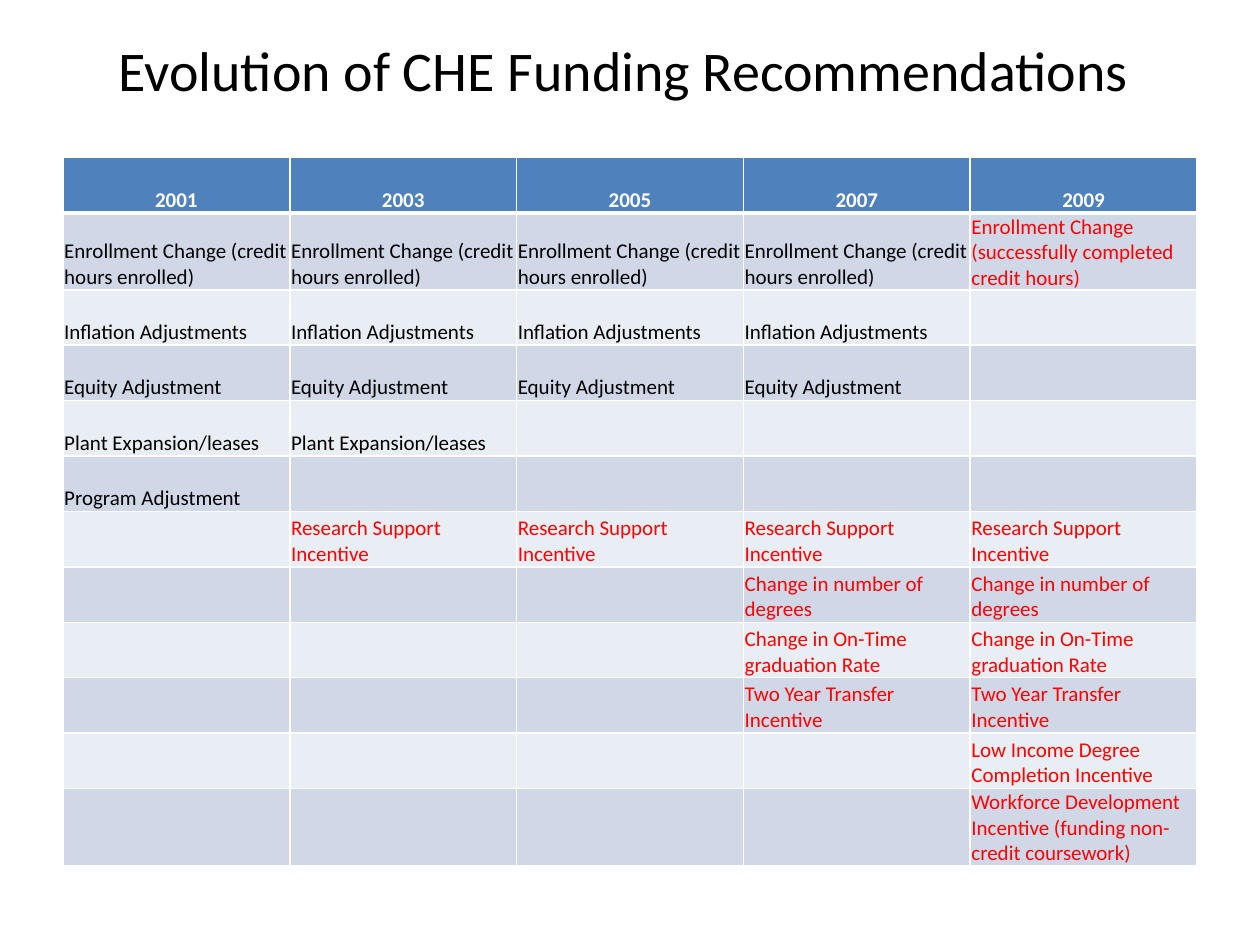
from lxml.etree import SubElement
from pptx import Presentation
from pptx.dml.color import RGBColor
from pptx.enum.text import MSO_ANCHOR, PP_ALIGN
from pptx.oxml.ns import qn
from pptx.util import Inches, Pt

BLACK = RGBColor(0x00, 0x00, 0x00)
WHITE = RGBColor(0xFF, 0xFF, 0xFF)
RED = RGBColor(0xFF, 0x00, 0x00)
HEADER_BLUE = RGBColor(0x4F, 0x81, 0xBD)
BAND_DARK = RGBColor(0xD0, 0xD8, 0xE8)
BAND_LIGHT = RGBColor(0xE9, 0xED, 0xF4)

SLIDE_WIDTH = Inches(10)
SLIDE_HEIGHT = Inches(7.5)
MARGIN = int(SLIDE_WIDTH * 0.05)
CONTENT_WIDTH = SLIDE_WIDTH - 2 * MARGIN
ROW_HEIGHT = Inches(0.44)
TALL_ROW_HEIGHT = Inches(0.61)

YEARS = ["2001", "2003", "2005", "2007", "2009"]
RECOMMENDATIONS = [
    [("Enrollment Change (credit hours enrolled)", "2001", "2007", BLACK),
     ("Enrollment Change (successfully completed credit hours)", "2009", "2009", RED)],
    [("Inflation Adjustments", "2001", "2007", BLACK)],
    [("Equity Adjustment", "2001", "2007", BLACK)],
    [("Plant Expansion/leases", "2001", "2003", BLACK)],
    [("Program Adjustment", "2001", "2001", BLACK)],
    [("Research Support Incentive", "2003", "2009", RED)],
    [("Change in number of degrees", "2007", "2009", RED)],
    [("Change in On-Time graduation Rate", "2007", "2009", RED)],
    [("Two Year Transfer Incentive", "2007", "2009", RED)],
    [("Low Income Degree Completion Incentive", "2009", "2009", RED)],
    [("Workforce Development Incentive (funding non-credit coursework)",
      "2009", "2009", RED)],
]
TALL_ROWS = {1, len(RECOMMENDATIONS)}


def write_text(frame, text, size=12, color=BLACK, bold=False, align=PP_ALIGN.LEFT):
    paragraph = frame.paragraphs[0]
    paragraph.alignment = align
    paragraph.font.size = Pt(size)
    if text:
        run = paragraph.add_run()
        run.text = text
        run.font.name = "Calibri"
        run.font.size = Pt(size)
        run.font.bold = bold
        run.font.color.rgb = color


def add_borders(cell, bottom_width):
    properties = cell._tc.get_or_add_tcPr()
    for side, width in (("L", 1), ("R", 1), ("T", 1), ("B", bottom_width)):
        border = SubElement(properties, qn(f"a:ln{side}"), w=str(Pt(width)))
        fill = SubElement(border, qn("a:solidFill"))
        SubElement(fill, qn("a:srgbClr"), val=str(WHITE))


def format_cell(cell, text, fill, bottom_width=1, **text_format):
    cell.margin_left = cell.margin_right = cell.margin_top = Inches(0.01)
    cell.margin_bottom = 0
    cell.vertical_anchor = MSO_ANCHOR.BOTTOM
    add_borders(cell, bottom_width)
    cell.fill.solid()
    cell.fill.fore_color.rgb = fill
    write_text(cell.text_frame, text, **text_format)


def add_title(slide, text):
    title = slide.shapes.add_textbox(MARGIN, Inches(0.17), CONTENT_WIDTH,
                                     int(SLIDE_HEIGHT * 0.1))
    frame = title.text_frame
    frame.word_wrap = True
    frame.vertical_anchor = MSO_ANCHOR.MIDDLE
    write_text(frame, text, size=32, align=PP_ALIGN.CENTER)


def spread_over_years(spans):
    entries = [("", BLACK)] * len(YEARS)
    for text, first, last, color in spans:
        for column in range(YEARS.index(first), YEARS.index(last) + 1):
            entries[column] = (text, color)
    return entries


def add_funding_table(slide):
    heights = [TALL_ROW_HEIGHT if row in TALL_ROWS else ROW_HEIGHT
               for row in range(len(RECOMMENDATIONS) + 1)]
    table = slide.shapes.add_table(len(heights), len(YEARS), MARGIN, Inches(1.25),
                                   CONTENT_WIDTH, sum(heights)).table
    for row, height in zip(table.rows, heights):
        row.height = height
    for column, year in enumerate(YEARS):
        format_cell(table.cell(0, column), year, HEADER_BLUE, bottom_width=3,
                    color=WHITE, bold=True, align=PP_ALIGN.CENTER)
    for row, spans in enumerate(RECOMMENDATIONS, start=1):
        band = BAND_DARK if row % 2 else BAND_LIGHT
        for column, (text, color) in enumerate(spread_over_years(spans)):
            format_cell(table.cell(row, column), text, band, color=color)


def main():
    presentation = Presentation()
    presentation.slide_width = SLIDE_WIDTH
    presentation.slide_height = SLIDE_HEIGHT
    slide = presentation.slides.add_slide(presentation.slide_layouts[6])
    add_title(slide, "Evolution of CHE Funding Recommendations ")
    add_funding_table(slide)
    presentation.save("out.pptx")


if __name__ == "__main__":
    main()
